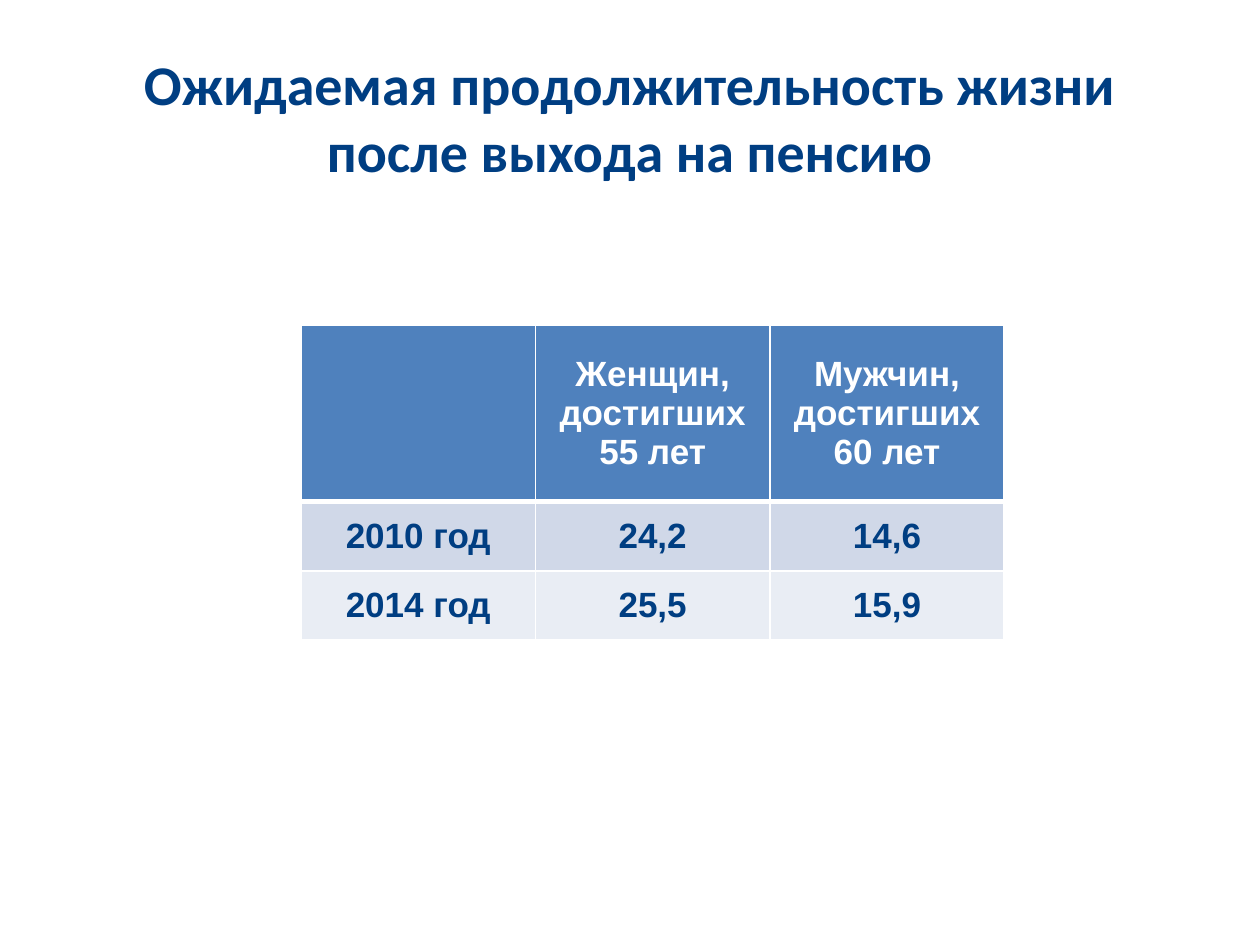
"""Builds a slide with life expectancy after retirement."""
import dataclasses

import pptx
import pptx.dml.color
import pptx.enum.text
import pptx.oxml
import pptx.oxml.ns
import pptx.util


@dataclasses.dataclass(frozen=True)
class Theme:
    navy: str = "003E82"
    white: str = "FFFFFF"
    header: str = "4F81BD"
    bands: tuple = ("D0D8E8", "E9EDF4")
    title_font: str = "Calibri"
    table_font: str = "Arial"
    title_size: int = 32
    table_size: int = 20
    rule: int = 1
    header_rule: int = 3


def rgb(value):
    return pptx.dml.color.RGBColor.from_string(value)


def write(tf, text, *, font, size, color, bold=True):
    p = tf.paragraphs[0]
    p.alignment = pptx.enum.text.PP_ALIGN.CENTER
    r = p.add_run()
    r.text = text
    r.font.name, r.font.size, r.font.bold = font, pptx.util.Pt(size), bold
    r.font.color.rgb = rgb(color)


def set_borders(cell, color, **widths):
    tc_pr = cell._tc.get_or_add_tcPr()
    for i, (side, width) in enumerate(widths.items()):
        ln = pptx.oxml.parse_xml(
            f'<a:ln{side} {pptx.oxml.ns.nsdecls("a")} w="{pptx.util.Pt(width)}">'
            f'<a:solidFill><a:srgbClr val="{color}"/></a:solidFill></a:ln{side}>'
        )
        tc_pr.insert(i, ln)


class SlideBuilder:
    COLS, ROWS = 100, 75

    def __init__(self, prs, theme):
        self.theme = theme
        self.unit_x = prs.slide_width / self.COLS
        self.unit_y = prs.slide_height / self.ROWS
        self.s = prs.slides.add_slide(prs.slide_layouts[6])

    def x(self, cols):
        return round(cols * self.unit_x)

    def y(self, rows):
        return round(rows * self.unit_y)

    def title(self, text, left, top, width, height):
        t = self.theme
        sp = self.s.shapes.add_textbox(
            self.x(left), self.y(top), self.x(width), self.y(height))
        tf = sp.text_frame
        tf.word_wrap = True
        tf.vertical_anchor = pptx.enum.text.MSO_ANCHOR.MIDDLE
        write(tf, text, font=t.title_font, size=t.title_size, color=t.navy)

    def table(self, data, left, top, col_width, row_heights):
        n_rows, n_cols = len(data), len(data[0])
        table = self.s.shapes.add_table(
            n_rows, n_cols, self.x(left), self.y(top),
            self.x(col_width * n_cols), self.y(sum(row_heights))).table
        for column in table.columns:
            column.width = self.x(col_width)
        for i, (row, height) in enumerate(zip(data, row_heights)):
            table.rows[i].height = self.y(height)
            for j, text in enumerate(row):
                self.cell(table.cell(i, j), text, i)

    def cell(self, cell, text, row):
        t = self.theme
        is_header = row == 0
        cell.vertical_anchor = pptx.enum.text.MSO_ANCHOR.MIDDLE
        cell.fill.solid()
        cell.fill.fore_color.rgb = rgb(
            t.header if is_header else t.bands[(row - 1) % len(t.bands)])
        set_borders(cell, t.white, L=t.rule, R=t.rule,
                    T=t.header_rule if row == 1 else t.rule,
                    B=t.header_rule if is_header else t.rule)
        if text:
            write(cell.text_frame, text, font=t.table_font, size=t.table_size,
                  color=t.white if is_header else t.navy)


def main():
    prs = pptx.Presentation()
    prs.slide_width = pptx.util.Inches(10)
    prs.slide_height = pptx.util.Inches(7.5)
    slide = SlideBuilder(prs, Theme())
    slide.title("Ожидаемая продолжительность жизни после выхода на пенсию",
                left=5, top=3, width=90, height=12.5)
    slide.table(
        [("", "Женщин, достигших 55 лет", "Мужчин, достигших 60 лет"),
         ("2010 год", "24,2", "14,6"),
         ("2014 год", "25,5", "15,9")],
        left=23.9, top=25.8, col_width=18.6, row_heights=(14, 5.5, 5.5))
    prs.save("out.pptx")


if __name__ == "__main__":
    main()
